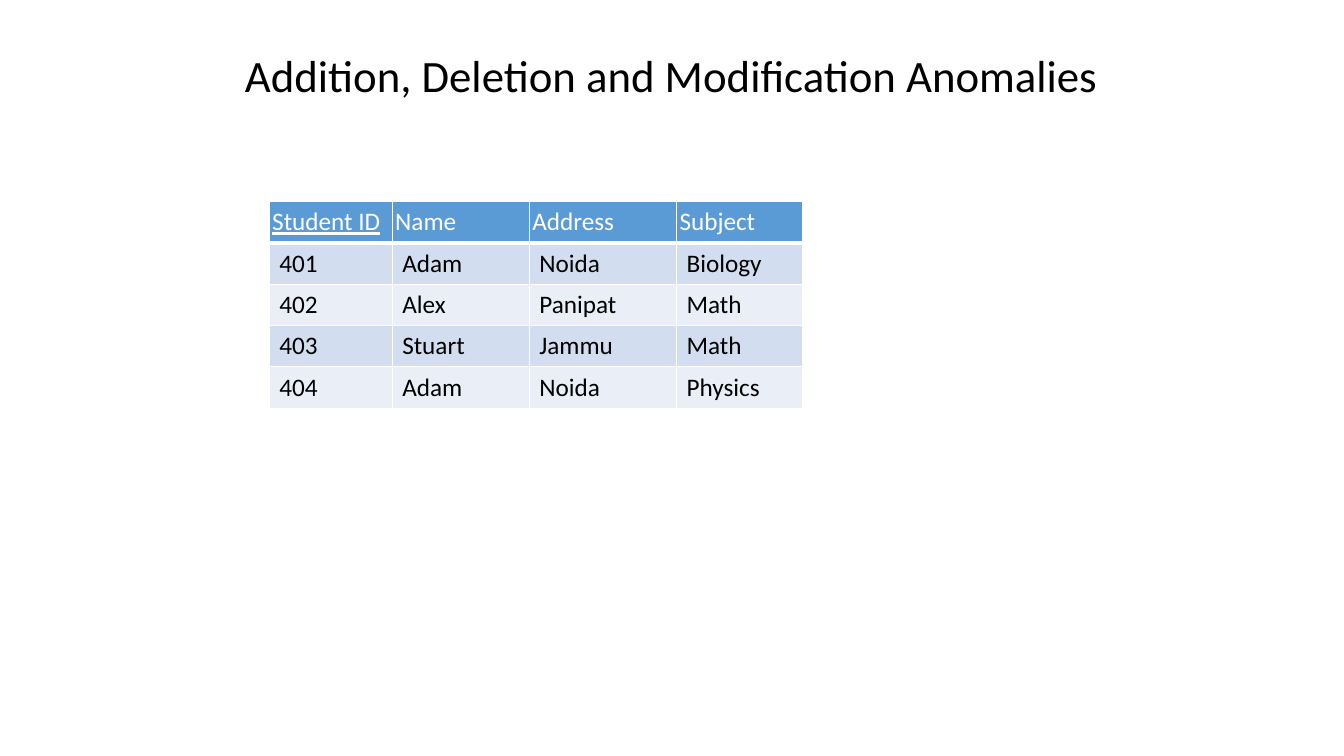
import pptx
import pptx.util
import pptx.dml.color
import pptx.enum.text
import pptx.oxml
import pptx.oxml.ns

TITLE = "Addition, Deletion and Modification Anomalies"
STUDENTS = [
    ("Student ID", "Name", "Address", "Subject"),
    ("401", "Adam", "Noida", "Biology"),
    ("402", "Alex", "Panipat", "Math"),
    ("403", "Stuart", "Jammu", "Math"),
    ("404", "Adam", "Noida", "Physics"),
]
COLORS = {"text": "000000", "header": "5B9BD5", "header_text": "FFFFFF",
          "odd": "D2DEEF", "even": "EAEFF7", "border": "FFFFFF"}
FONT = "Calibri"
SLIDE_SIZE = (13.33, 7.5)
TITLE_BOX = (2.33, 0.42, 8.76, 0.64)
TABLE_CORNER = (2.67, 2)
COLUMN_WIDTHS = (1.22, 1.36, 1.46, 1.25)
ROW_HEIGHT = 0.41
HEADER_INSET = 0.03

inches = pptx.util.Inches


def rgb(name):
    return pptx.dml.color.RGBColor.from_string(COLORS[name])


def style_text(frame, size, color):
    for span in frame.paragraphs[0].runs:
        span.font.name = FONT
        span.font.size = pptx.util.Pt(size)
        span.font.bold = False
        span.font.color.rgb = rgb(color)


def add_borders(cell, bottom_points):
    properties = cell._tc.get_or_add_tcPr()
    for side, points in (("L", 1), ("R", 1), ("T", 1), ("B", bottom_points)):
        properties.append(pptx.oxml.parse_xml(
            f'<a:ln{side} {pptx.oxml.ns.nsdecls("a")} w="{pptx.util.Pt(points)}">'
            f'<a:solidFill><a:srgbClr val="{COLORS["border"]}"/></a:solidFill>'
            f'</a:ln{side}>'))


def add_title(page):
    box = page.shapes.title
    box.left, box.top, box.width, box.height = map(inches, TITLE_BOX)
    frame = box.text_frame
    frame.text = TITLE
    frame.word_wrap = False
    frame.auto_size = pptx.enum.text.MSO_AUTO_SIZE.NONE
    frame.vertical_anchor = pptx.enum.text.MSO_ANCHOR.TOP
    frame.paragraphs[0].alignment = pptx.enum.text.PP_ALIGN.LEFT
    style_text(frame, 32, "text")


def add_student_table(page):
    left, top = TABLE_CORNER
    table = page.shapes.add_table(
        len(STUDENTS), len(COLUMN_WIDTHS), inches(left), inches(top),
        inches(sum(COLUMN_WIDTHS)), inches(ROW_HEIGHT * len(STUDENTS))).table
    for column, width in zip(table.columns, COLUMN_WIDTHS):
        column.width = inches(width)
    for number, (row, words) in enumerate(zip(table.rows, STUDENTS)):
        row.height = inches(ROW_HEIGHT)
        is_header = number == 0
        band = "header" if is_header else "odd" if number % 2 else "even"
        for cell, word in zip(row.cells, words):
            cell.text_frame.text = word
            style_text(cell.text_frame, 18, "header_text" if is_header else "text")
            cell.vertical_anchor = pptx.enum.text.MSO_ANCHOR.MIDDLE
            if is_header:
                cell.margin_left = cell.margin_right = inches(HEADER_INSET)
                cell.margin_top = cell.margin_bottom = inches(HEADER_INSET)
            add_borders(cell, 3 if is_header else 1)
            cell.fill.solid()
            cell.fill.fore_color.rgb = rgb(band)
    key_heading = table.cell(0, 0).text_frame.paragraphs[0].runs[0]
    key_heading.font.underline = True


def main():
    deck = pptx.Presentation()
    deck.slide_width, deck.slide_height = map(inches, SLIDE_SIZE)
    page = deck.slides.add_slide(deck.slide_layouts.get_by_name("Title Only"))
    add_title(page)
    add_student_table(page)
    deck.save("out.pptx")


if __name__ == "__main__":
    main()
